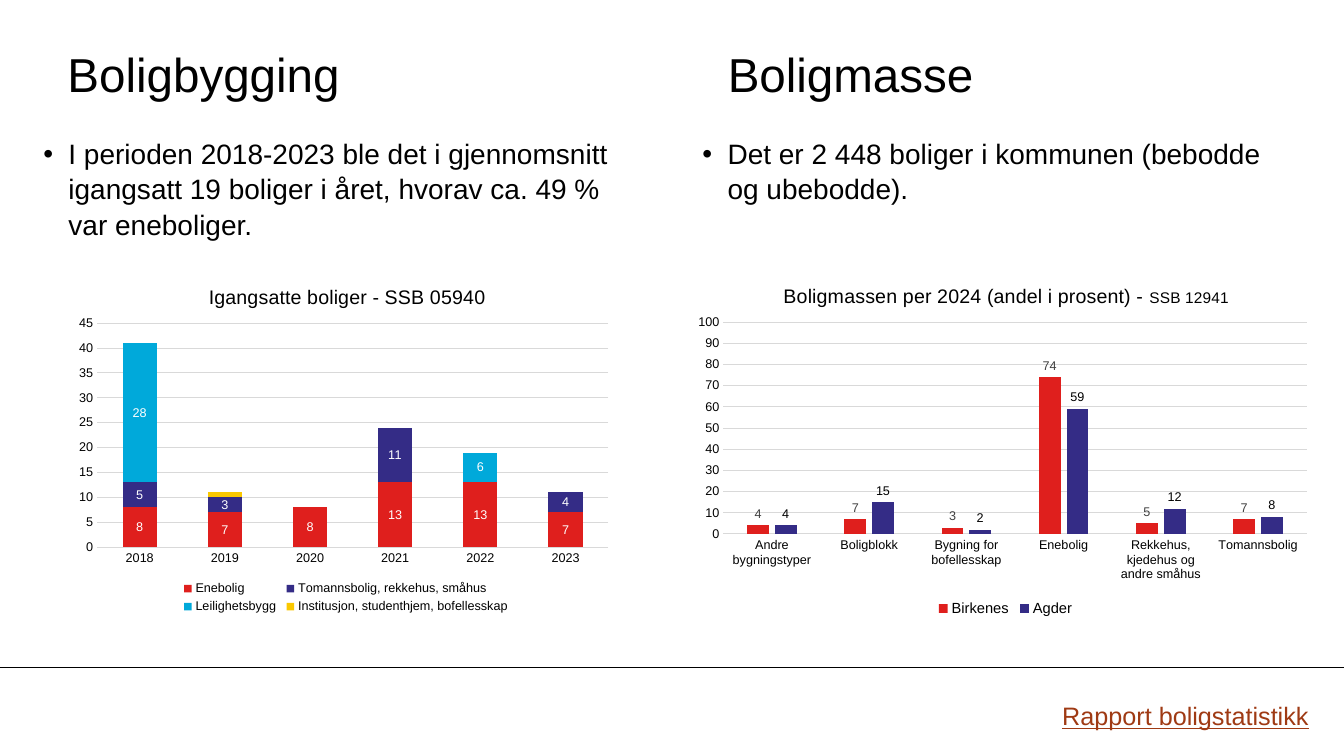
from dataclasses import dataclass
from typing import Any

from lxml import etree
from pptx import Presentation
from pptx import util as u
from pptx.chart.data import CategoryChartData
from pptx.dml.color import RGBColor
from pptx.enum import chart as charts
from pptx.enum import shapes, text
from pptx.oxml.ns import qn

COLORS = {
    "black": "000000", "white": "FFFFFF", "gray": "404040", "grid": "D9D9D9",
    "red": "DF1F1D", "indigo": "342C86", "cyan": "00A9DA", "yellow": "FAC800",
    "link": "9F3A14",
}
FONT = "Arial"
NO_INSETS = {"margin_left": 0, "margin_right": 0, "margin_top": 0, "margin_bottom": 0,
             "word_wrap": True, "auto_size": text.MSO_AUTO_SIZE.NONE}
HEADING_FRAME = {**NO_INSETS, "vertical_anchor": text.MSO_ANCHOR.MIDDLE}
BULLET_FRAME = {**NO_INSETS, "vertical_anchor": text.MSO_ANCHOR.TOP}
HEADING_PARAGRAPH = {"alignment": text.PP_ALIGN.LEFT, "space_before": u.Pt(0)}
BULLET_PARAGRAPH = {**HEADING_PARAGRAPH, "line_spacing": 1.05}
Box = tuple[float, float, float, float]


@dataclass
class PlaceholderText:
    index: int
    box: Box
    content: str
    size: float
    bullet: bool = False


@dataclass
class Series:
    name: str
    values: list[int]
    color: str
    label_color: str | None = None


@dataclass
class ColumnChart:
    kind: Any
    box: Box
    title: list[tuple[str, float]]
    categories: list[str]
    series: list[Series]
    gap: int
    overlap: int
    maximum: int
    step: int
    legend_size: float
    title_layout: dict[str, float]
    plot_layout: dict[str, float]
    legend_layout: dict[str, float]


TEXTS = [
    PlaceholderText(0, (1.7, 0.89, 7.62, 1.9), "Boligbygging", 34),
    PlaceholderText(2, (1.09, 3.4, 15.21, 2.57),
                    "I perioden 2018-2023 ble det i gjennomsnitt igangsatt 19 boliger i året, "
                    "hvorav ca. 49 % var eneboliger.", 20, True),
    PlaceholderText(3, (18.34, 0.89, 7.62, 1.9), "Boligmasse", 34),
    PlaceholderText(4, (17.7, 3.4, 14.88, 2.13),
                    "Det er 2 448 boliger i kommunen (bebodde og ubebodde).", 20, True),
]
CHARTS = [
    ColumnChart(
        charts.XL_CHART_TYPE.COLUMN_CLUSTERED, (17.27, 6.63, 15.98, 9.02),
        [("Boligmassen per 2024 (andel i prosent) - ", 14), ("SSB 12941", 11)],
        ["Andre bygningstyper", "Boligblokk", "Bygning for bofellesskap", "Enebolig",
         "Rekkehus, kjedehus og andre småhus", "Tomannsbolig"],
        [Series("Birkenes", [4, 7, 3, 74, 5, 7], "red", "gray"),
         Series("Agder", [4, 15, 2, 59, 12, 8], "indigo", "black")],
        219, -27, 100, 10, 10.5,
        {"x": 0.15, "y": 0.05},
        {"x": 0.06, "y": 0.165, "w": 0.92, "h": 0.592},
        {"x": 0.39, "y": 0.93, "w": 0.23, "h": 0.07}),
    ColumnChart(
        charts.XL_CHART_TYPE.COLUMN_STACKED, (1.7, 6.63, 13.89, 9.02),
        [("Igangsatte boliger - SSB 05940", 14)],
        [str(year) for year in range(2018, 2024)],
        [Series("Enebolig", [8, 7, 8, 13, 13, 7], "red", "white"),
         Series("Tomannsbolig, rekkehus, småhus", [5, 3, 0, 11, 0, 4], "indigo", "white"),
         Series("Leilighetsbygg", [28, 0, 0, 0, 6, 0], "cyan", "white"),
         Series("Institusjon, studenthjem, bofellesskap", [0, 1, 0, 0, 0, 0], "yellow")],
        150, 100, 45, 5, 9,
        {"x": 0.25, "y": 0.05},
        {"x": 0.054, "y": 0.168, "w": 0.927, "h": 0.626},
        {"x": 0.2, "y": 0.88, "w": 0.61, "h": 0.11}),
]


def rgb(name: str) -> RGBColor:
    return RGBColor.from_string(COLORS[name])


def apply_format(target: Any, values: dict[str, Any]) -> None:
    for name, value in values.items():
        setattr(target, name, value)


def set_font(font: Any, size: float, color: str = "black", underline: bool = False) -> None:
    apply_format(font, {"name": FONT, "size": u.Pt(size), "bold": False, "underline": underline})
    font.color.rgb = rgb(color)


def place(shape: Any, box: Box) -> None:
    apply_format(shape, dict(zip(("left", "top", "width", "height"), map(u.Cm, box))))


def fill_placeholder(slide: Any, item: PlaceholderText) -> None:
    shape = slide.placeholders[item.index]
    place(shape, item.box)
    apply_format(shape.text_frame, BULLET_FRAME if item.bullet else HEADING_FRAME)
    paragraph = shape.text_frame.paragraphs[0]
    if item.bullet:
        properties = paragraph._p.get_or_add_pPr()
        properties.set("marL", str(u.Cm(0.635)))
        properties.set("indent", str(-u.Cm(0.635)))
    apply_format(paragraph, BULLET_PARAGRAPH if item.bullet else HEADING_PARAGRAPH)
    run = paragraph.add_run()
    run.text = item.content
    set_font(run.font, item.size)


def set_layout(element: Any, values: dict[str, float], after: str | None = None,
               inner: bool = False) -> None:
    for existing in element.findall(qn("c:layout")):
        element.remove(existing)
    layout = etree.Element(qn("c:layout"))
    manual = etree.SubElement(layout, qn("c:manualLayout"))
    entries = {"layoutTarget": "inner"} if inner else {}
    entries |= {"xMode": "edge", "yMode": "edge"}
    entries |= {name: str(value) for name, value in values.items()}
    for name, value in entries.items():
        etree.SubElement(manual, qn(f"c:{name}")).set("val", value)
    position = element.index(element.find(qn(after))) + 1 if after else 0
    element.insert(position, layout)


def add_series_format(series: Any, item: Series) -> None:
    series.format.fill.solid()
    series.format.fill.fore_color.rgb = rgb(item.color)
    series.invert_if_negative = False
    if item.label_color:
        labels = series.data_labels
        apply_format(labels, {"show_value": True, "number_format": "0;;;",
                              "number_format_is_linked": False})
        set_font(labels.font, 9, item.label_color)


def add_column_chart(slide: Any, item: ColumnChart) -> None:
    data = CategoryChartData()
    data.categories = item.categories
    for entry in item.series:
        data.add_series(entry.name, entry.values)
    chart = slide.shapes.add_chart(item.kind, *map(u.Cm, item.box), data).chart
    set_font(chart.font, 10)
    chart.has_title = True
    title_paragraph = chart.chart_title.text_frame.paragraphs[0]
    for content, size in item.title:
        run = title_paragraph.add_run()
        run.text = content
        set_font(run.font, size)
    chart.has_legend = True
    apply_format(chart.legend, {"position": charts.XL_LEGEND_POSITION.BOTTOM,
                                "include_in_layout": False})
    set_font(chart.legend.font, item.legend_size)

    for axis in (chart.category_axis, chart.value_axis):
        apply_format(axis, {"major_tick_mark": charts.XL_TICK_MARK.NONE,
                            "minor_tick_mark": charts.XL_TICK_MARK.NONE})
        set_font(axis.tick_labels.font, 9)
    apply_format(chart.value_axis, {"minimum_scale": 0, "maximum_scale": item.maximum,
                                    "major_unit": item.step, "has_major_gridlines": True})
    chart.value_axis.format.line.fill.background()
    for target in (chart.category_axis, chart.value_axis.major_gridlines):
        target.format.line.color.rgb = rgb("grid")
        target.format.line.width = u.Pt(0.75)

    plot = chart.plots[0]
    apply_format(plot, {"gap_width": item.gap, "overlap": item.overlap,
                        "vary_by_categories": False})
    for series, entry in zip(plot.series, item.series):
        add_series_format(series, entry)
    plot_area = chart._chartSpace.find(".//" + qn("c:plotArea"))
    set_layout(plot_area, item.plot_layout, inner=True)
    set_layout(chart.chart_title._element, item.title_layout, "c:tx")
    set_layout(chart.legend._element, item.legend_layout, "c:legendPos")


def main() -> None:
    presentation = Presentation()
    apply_format(presentation, {"slide_width": u.Cm(33.87), "slide_height": u.Cm(19.05)})
    slide = presentation.slides.add_slide(presentation.slide_layouts[4])
    unused = slide.placeholders[1]._element
    unused.getparent().remove(unused)

    divider = slide.shapes.add_connector(shapes.MSO_CONNECTOR.STRAIGHT, 0, u.Cm(16.81),
                                         presentation.slide_width, u.Cm(16.81))
    divider.line.color.rgb = rgb("black")
    divider.line.width = u.Pt(0.75)
    etree.SubElement(divider._element.spPr, qn("a:effectLst"))

    for item in TEXTS:
        fill_placeholder(slide, item)
    report = slide.shapes.add_textbox(*map(u.Cm, (26.52, 17.53, 6.73, 1.02)))
    report.text_frame.word_wrap = True
    run = report.text_frame.paragraphs[0].add_run()
    run.text = "Rapport boligstatistikk"
    set_font(run.font, 18, "link", True)
    for item in CHARTS:
        add_column_chart(slide, item)
    presentation.save("out.pptx")


if __name__ == "__main__":
    main()
